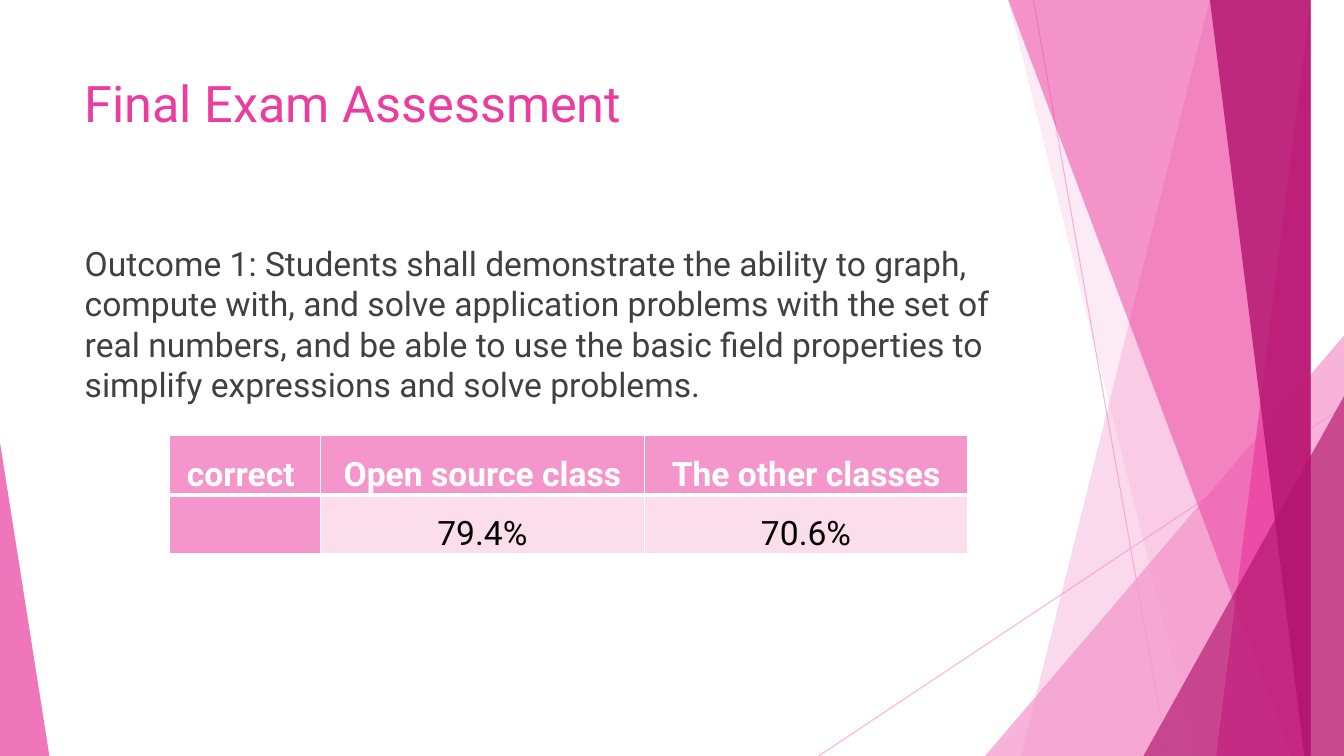
from dataclasses import dataclass

from lxml import etree
from pptx import Presentation
from pptx.dml.color import RGBColor as RGB
from pptx.enum.shapes import MSO_CONNECTOR, MSO_SHAPE
from pptx.enum.text import MSO_ANCHOR, MSO_AUTO_SIZE, PP_ALIGN
from pptx.oxml import parse_xml
from pptx.oxml.ns import nsdecls, qn
from pptx.util import Inches, Pt


@dataclass(frozen=True)
class Theme:
    font: str = "Roboto"
    title_size: int = 36
    text_size: int = 24
    light: str = "F496CB"
    pink: str = "EB3D9F"
    dark: str = "B2136D"
    pale: str = "FBDDEC"
    text: str = "404040"
    black: str = "000000"
    white: str = "FFFFFF"


T = Theme()


def set_opacity(shape, percent):
    color = shape.element.spPr.find(".//" + qn("a:srgbClr"))
    etree.SubElement(color, qn("a:alpha")).set("val", str(percent * 1000))


def add_run(p, text, size, color, bold=False):
    r = p.add_run()
    r.text = text
    r.font.name, r.font.size, r.font.bold = T.font, Pt(size), bold
    r.font.color.rgb = RGB.from_string(color)


prs = Presentation()
prs.slide_width, prs.slide_height = Inches(13.33), Inches(7.5)
s = prs.slides.add_slide(prs.slide_layouts[1])
decor = s.shapes.add_group_shape().shapes

# Thin crossing lines
for x1, y1, x2, y2 in [(10.25, 0, 11.58, 7.5), (13.33, 4.03, 8.12, 7.5)]:
    line = decor.add_connector(MSO_CONNECTOR.STRAIGHT, Inches(x1), Inches(y1),
                               Inches(x2), Inches(y2))
    line.line.color.rgb = RGB.from_string(T.light)
    line.line.width = Pt(0.75)
    set_opacity(line, 70)
    etree.SubElement(line.element.spPr, qn("a:effectLst"))

# Bands reach the right edge: (top x, bottom x, colour, opacity)
# Triangles: (left, top, width, height, apex, colour, opacity)
facets = [
    (12.28, 10.04, T.light, 36),
    (10.5, 11.83, T.light, 20),
    (9.77, 3.33, 3.56, 4.17, 1, T.light, 72),
    (10.21, 12.91, T.pink, 50),
    (13.03, 11.92, T.pink, 70),
    (11.96, 13.18, T.dark, 80),
    (11.34, 3.93, 1.99, 3.57, 1, T.dark, 66),
    (0, 4.39, 0.49, 3.11, 0, T.pink, 70),
]
for *geometry, color, opacity in facets:
    if len(geometry) == 2:
        top_x, bottom_x = geometry
        outline = decor.build_freeform(top_x, -0.01, scale=Inches(1))
        outline.add_line_segments([(13.33, -0.01), (13.33, 7.5), (bottom_x, 7.5)])
        facet = outline.convert_to_shape()
    else:
        *box, apex = geometry
        facet = decor.add_shape(MSO_SHAPE.ISOSCELES_TRIANGLE, *map(Inches, box))
        facet.adjustments[0] = apex
    facet.shadow.inherit = False
    facet.fill.solid()
    facet.fill.fore_color.rgb = RGB.from_string(color)
    facet.line.fill.background()
    set_opacity(facet, opacity)

# Title and body
outcome = ("Outcome 1: Students shall demonstrate the ability to graph, compute with, "
           "and solve application problems with the set of real numbers, and be able to "
           "use the basic field properties to simplify expressions and solve problems.")
for sp, top, height, text, size, color, before in [
    (s.shapes.title, 0.67, 1.44, "Final Exam Assessment", T.title_size, T.pink, 0),
    (s.placeholders[1], 2.36, 4.24, outcome, T.text_size, T.text, 10),
]:
    sp.left, sp.top, sp.width, sp.height = map(Inches, (0.74, top, 9.4, height))
    tf = sp.text_frame
    tf.word_wrap, tf.auto_size = True, MSO_AUTO_SIZE.NONE
    tf.vertical_anchor = MSO_ANCHOR.TOP
    p = tf.paragraphs[0]
    p.alignment, p.space_before = PP_ALIGN.LEFT, Pt(before)
    pPr = p._p.get_or_add_pPr()
    pPr.set("marL", "0")
    pPr.set("indent", "0")
    etree.SubElement(pPr, qn("a:buNone"))
    add_run(p, text, size, color)
    s.shapes.element.append(sp.element)  # in front of the facets

# Results table
rows = [["correct ", "Open source class", "The other classes"],
        ["", "79.4%", "70.6%"]]
table = s.shapes.add_table(2, 3, Inches(1.68), Inches(4.32),
                           Inches(7.92), Inches(1.16)).table
for column, width in zip(table.columns, (1.5, 3.21, 3.21)):
    column.width = Inches(width)
for i, row in enumerate(rows):
    table.rows[i].height = Inches(0.58)
    for j, text in enumerate(row):
        cell = table.cell(i, j)
        heading = i == 0 or j == 0
        cell.margin_left = cell.margin_right = Inches(0.07)
        cell.margin_top = cell.margin_bottom = 0
        cell.fill.solid()
        cell.fill.fore_color.rgb = RGB.from_string(T.light if heading else T.pale)
        widths = {"L": 1, "R": 1, "T": 3 if i else 1, "B": 1 if i else 3}
        for k, (side, width) in enumerate(widths.items()):
            cell._tc.tcPr.insert(k, parse_xml(
                f'<a:ln{side} {nsdecls("a")} w="{Pt(width)}"><a:solidFill>'
                f'<a:srgbClr val="{T.white}"/></a:solidFill></a:ln{side}>'))
        if text:
            p = cell.text_frame.paragraphs[0]
            p.alignment, p.line_spacing = PP_ALIGN.CENTER, 1.5
            add_run(p, text, T.text_size, T.white if heading else T.black, heading)

prs.save("out.pptx")
